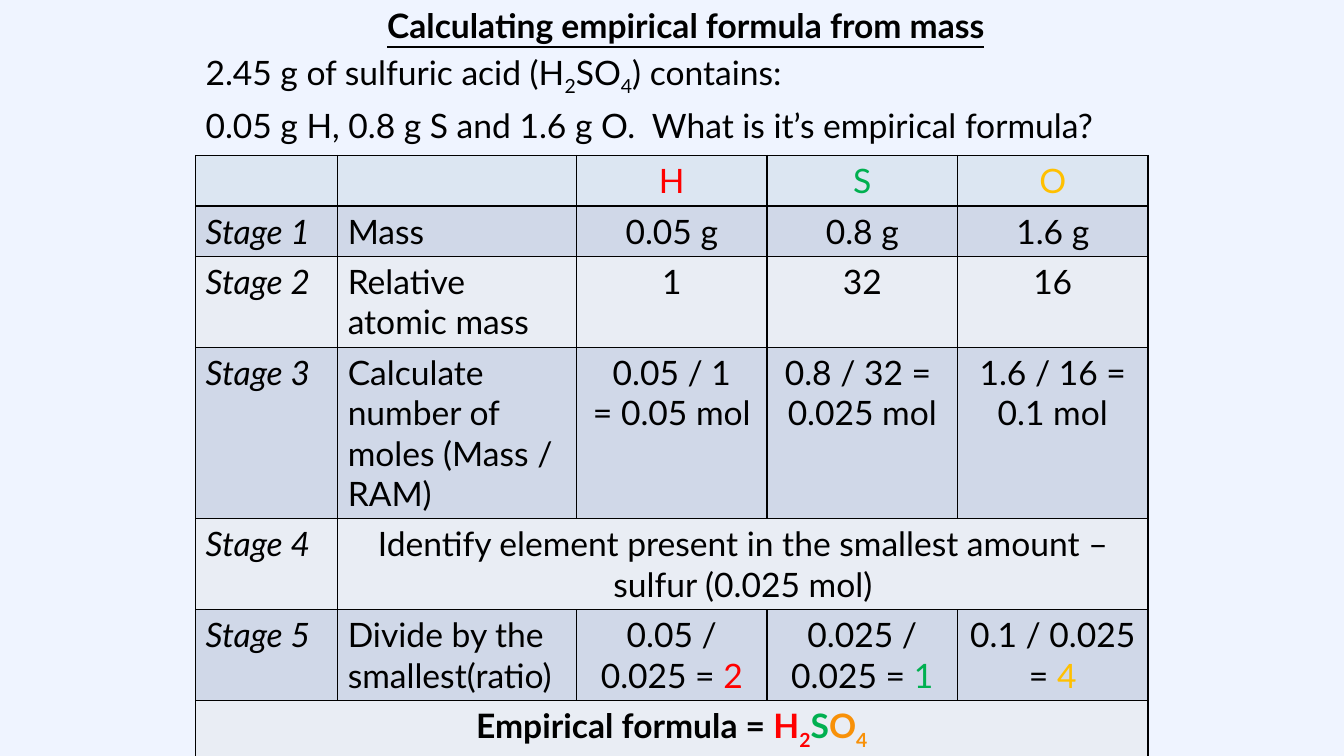
"""Build the slide on calculating an empirical formula from mass."""
import pptx
import pptx.dml.color
import pptx.enum.text
import pptx.util
from lxml import etree

Cm, Pt = pptx.util.Cm, pptx.util.Pt
RGBColor = pptx.dml.color.RGBColor
CENTER = pptx.enum.text.PP_ALIGN.CENTER
LEFT = pptx.enum.text.PP_ALIGN.LEFT

BLACK = RGBColor(0x00, 0x00, 0x00)
RED = RGBColor(0xFF, 0x00, 0x00)
GREEN = RGBColor(0x00, 0xB0, 0x50)
GOLD = RGBColor(0xFF, 0xC0, 0x00)
ORANGE = RGBColor(0xF8, 0x91, 0x08)
PAGE = RGBColor(0xEF, 0xF4, 0xFF)
HEADER = RGBColor(0xDC, 0xE6, 0xF2)
BANDS = (RGBColor(0xE9, 0xED, 0xF4), RGBColor(0xD0, 0xD8, 0xE8))

FONT, SIZE = "Lato", Pt(24)
SUB = True

# PLACEHOLDER
TITLE = "Calculating empirical formula from mass"
QUESTION = [
    [("2.45 g of sulfuric acid (H",), ("2", BLACK, SUB), ("SO",),
     ("4", BLACK, SUB), (") contains:",)],
    [("0.05 g H, 0.8 g S and 1.6 g O.  What is it’s empirical formula?",)],
]
STAGES = [
    ["", "", [[("H", RED)]], [[("S", GREEN)]], [[("O", GOLD)]]],
    ["Stage 1", "Mass", "0.05 g", "0.8 g", "1.6 g"],
    ["Stage 2", "Relative atomic mass", "1", "32", "16"],
    ["Stage 3", "Calculate number of moles (Mass / RAM)",
     [[("0.05 / 1",)], [("= 0.05 mol",)]],
     [[("0.8 / 32 = ",)], [("0.025 mol",)]],
     "1.6 / 16 = 0.1 mol"],
    ["Stage 4",
     "Identify element present in the smallest amount – sulfur (0.025 mol)"],
    ["Stage 5", "Divide by the smallest(ratio)",
     [[("0.05 / 0.025 = ",), ("2", RED)]],
     [[("0.025 / 0.025 =",), (" 1", GREEN)]],
     [[("0.1 / 0.025 = ",), ("4", GOLD)]]],
    [[[("Empirical formula = ",), ("H", RED), ("2", RED, SUB), ("S", GREEN),
       ("O", ORANGE), ("4", ORANGE, SUB)]]],
]
COLUMN_WIDTHS = [Cm(3.58), Cm(6.02)] + [Cm(4.8)] * 3
ROW_HEIGHTS = [Cm(h) for h in (1.27, 1.27, 2.29, 4.32, 2.29, 2.29, 1.27)]


def write(frame, paragraphs, align=LEFT, bold=False, italic=False):
    """Fill a text frame with paragraphs of (text, colour, subscript) runs."""
    if isinstance(paragraphs, str):
        paragraphs = [[(paragraphs,)]]
    for index, runs in enumerate(paragraphs):
        paragraph = frame.add_paragraph() if index else frame.paragraphs[0]
        paragraph.alignment = align
        paragraph.font.name, paragraph.font.size = FONT, SIZE
        paragraph.font.bold, paragraph.font.italic = bold, italic
        paragraph.font.color.rgb = BLACK
        for text, *style in runs:
            run = paragraph.add_run()
            run.text = text
            if style:
                run.font.color.rgb = style[0]
            if SUB in style:
                run.font._element.set("baseline", "-25000")


def add_borders(cell):
    """Draw a thin black line on each side of a cell."""
    properties = cell._tc.get_or_add_tcPr()
    namespace = "{%s}" % properties.nsmap["a"]
    for side in ("lnL", "lnR", "lnT", "lnB"):
        line = etree.SubElement(properties, namespace + side, w=str(Pt(1)))
        fill = etree.SubElement(line, namespace + "solidFill")
        etree.SubElement(fill, namespace + "srgbClr", val=str(BLACK))


def add_heading(slide):
    """Add the underlined title and the question below it."""
    box = slide.shapes.add_textbox(Cm(4.93), 0, Cm(24.71), Cm(3.9))
    frame = box.text_frame
    frame.word_wrap = True
    write(frame, [[(TITLE,)]] + QUESTION)
    title = frame.paragraphs[0]
    title.alignment = CENTER
    title.font.bold = title.font.underline = True
    for paragraph in frame.paragraphs:
        paragraph.space_before = Pt(4.8)


def add_stages(slide):
    """Add the table; a short row's last entry spans the columns left over."""
    columns = len(COLUMN_WIDTHS)
    table = slide.shapes.add_table(
        len(STAGES), columns, Cm(4.93), Cm(3.92),
        sum(COLUMN_WIDTHS), sum(ROW_HEIGHTS)).table
    table.first_row = table.horz_banding = False
    for column, width in zip(table.columns, COLUMN_WIDTHS):
        column.width = width
    for r, entries in enumerate(STAGES):
        table.rows[r].height = ROW_HEIGHTS[r]
        for c in range(columns):
            cell = table.cell(r, c)
            add_borders(cell)
            cell.fill.solid()
            cell.fill.fore_color.rgb = BANDS[r % 2] if r else HEADER
        last = len(entries) - 1
        if last < columns - 1:
            table.cell(r, last).merge(table.cell(r, columns - 1))
        for c, entry in enumerate(entries):
            spans = last < columns - 1 and c == last
            write(table.cell(r, c).text_frame, entry,
                  align=CENTER if c > 1 or spans else LEFT,
                  bold=last == 0, italic=c == 0 and not spans)


def main():
    presentation = pptx.Presentation()
    presentation.slide_width, presentation.slide_height = Cm(33.87), Cm(19.05)
    slide = presentation.slides.add_slide(presentation.slide_layouts[6])
    slide.background.fill.solid()
    slide.background.fill.fore_color.rgb = PAGE
    add_heading(slide)
    add_stages(slide)
    presentation.save("out.pptx")


if __name__ == "__main__":
    main()
